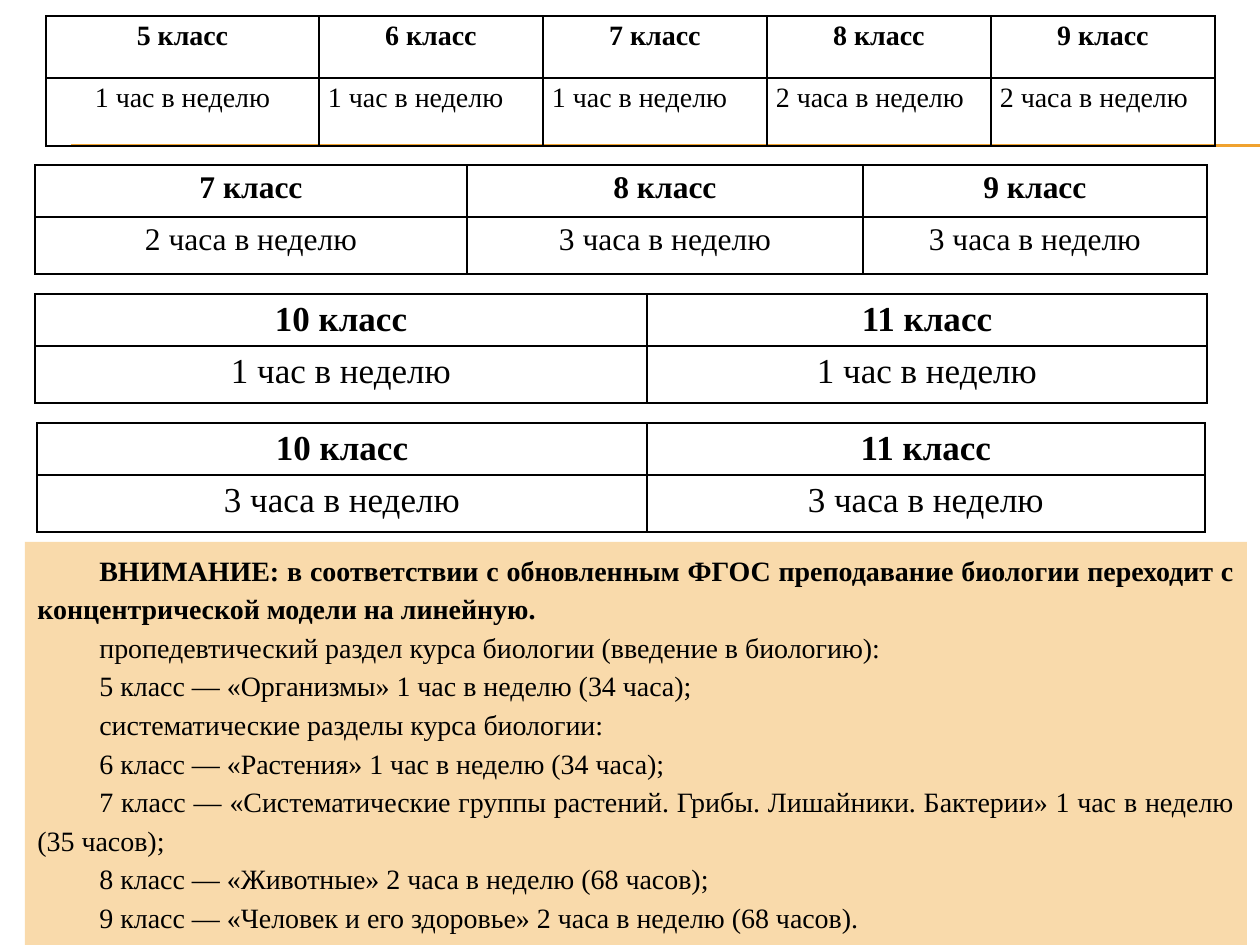
import pptx
import pptx.util
import pptx.dml.color
import pptx.enum.shapes
import pptx.enum.text
import pptx.oxml.ns
from lxml import etree

ALIGN = pptx.enum.text.PP_ALIGN
COLORS = {"text": "000000", "border": "000000", "rule": "F0A22E", "notice": "F9DAAB"}
FONT = "Times New Roman"
SCALE = 914400 / 126  # EMU in one px

TABLES = [
    {"at": (46, 16), "columns": [273, 224, 224, 224, 224], "rows": [62, 68], "size": 16,
     "justify_from": 1,
     "cells": [["5 класс", "6 класс", "7 класс", "8 класс", "9 класс"],
               ["1 час в неделю", "1 час в неделю", "1 час в неделю",
                "2 часа в неделю", "2 часа в неделю"]]},
    {"at": (35, 165), "columns": [432, 396, 344], "rows": [52, 57], "size": 18,
     "cells": [["7 класс", "8 класс", "9 класс"],
               ["2 часа в неделю", "3 часа в неделю", "3 часа в неделю"]]},
    {"at": (35, 294), "columns": [612, 560], "rows": [52, 57], "size": 20,
     "cells": [["10 класс", "11 класс"], ["1 час в неделю", "1 час в неделю"]]},
    {"at": (37, 423), "columns": [610, 558], "rows": [52, 57], "size": 20,
     "cells": [["10 класс", "11 класс"], ["3 часа в неделю", "3 часа в неделю"]]},
]

NOTICE = [
    "ВНИМАНИЕ: в соответствии с обновленным ФГОС преподавание биологии переходит "
    "с концентрической модели на линейную.",
    "пропедевтический раздел курса биологии (введение в биологию):",
    "5 класс — «Организмы» 1 час в неделю (34 часа);",
    "систематические разделы курса биологии:",
    "6 класс — «Растения» 1 час в неделю (34 часа);",
    "7 класс — «Систематические группы растений. Грибы. Лишайники. Бактерии» "
    "1 час в неделю (35 часов);",
    "8 класс — «Животные» 2 часа в неделю (68 часов);",
    "9 класс — «Человек и его здоровье» 2 часа в неделю (68 часов).",
]


def px(length):
    return pptx.util.Emu(round(length * SCALE))


def rgb(name):
    return pptx.dml.color.RGBColor.from_string(COLORS[name])


def format_paragraph(para, size, bold, align):
    para.alignment = align
    para.line_spacing = 1.15
    for span in para.runs:
        span.font.name = FONT
        span.font.size = pptx.util.Pt(size)
        span.font.bold = bold
        span.font.color.rgb = rgb("text")


def add_borders(cell):
    properties = cell._tc.get_or_add_tcPr()
    qn = pptx.oxml.ns.qn
    for side in ("lnL", "lnR", "lnT", "lnB"):
        line = etree.SubElement(properties, qn(f"a:{side}"), w="12700")
        fill = etree.SubElement(line, qn("a:solidFill"))
        etree.SubElement(fill, qn("a:srgbClr"), val=COLORS["border"])


def add_rule(page, top):
    rule = page.shapes.add_connector(
        pptx.enum.shapes.MSO_CONNECTOR.STRAIGHT, px(71), px(top), px(1260), px(top))
    rule.line.color.rgb = rgb("rule")
    rule.line.width = pptx.util.Pt(0.75)
    etree.SubElement(rule._element.spPr, pptx.oxml.ns.qn("a:effectLst"))


def add_notice(page):
    box = page.shapes.add_shape(pptx.enum.shapes.MSO_SHAPE.RECTANGLE,
                                px(25), px(542), px(1222), px(403))
    box.shadow.inherit = False
    box.fill.solid()
    box.fill.fore_color.rgb = rgb("notice")
    box.line.fill.background()
    frame = box.text_frame
    frame.word_wrap = True
    frame.auto_size = pptx.enum.text.MSO_AUTO_SIZE.SHAPE_TO_FIT_TEXT
    frame.vertical_anchor = pptx.enum.text.MSO_ANCHOR.TOP
    frame.text = "\n".join(NOTICE)
    for index, para in enumerate(frame.paragraphs):
        para._p.get_or_add_pPr().set("indent", str(px(62)))
        format_paragraph(para, 16, index == 0, ALIGN.JUSTIFY)


def add_hours_table(page, data):
    left, top = data["at"]
    columns, rows = data["columns"], data["rows"]
    table = page.shapes.add_table(len(rows), len(columns), px(left), px(top),
                                  px(sum(columns)), px(sum(rows))).table
    for column, width in zip(table.columns, columns):
        column.width = px(width)
    justify_from = data.get("justify_from", len(columns))
    for r, (height, texts) in enumerate(zip(rows, data["cells"])):
        table.rows[r].height = px(height)
        for c, text in enumerate(texts):
            cell = table.cell(r, c)
            cell.text = text
            cell.margin_left = cell.margin_right = px(9)
            cell.margin_top = cell.margin_bottom = 0
            add_borders(cell)
            cell.fill.background()
            justified = r > 0 and c >= justify_from
            format_paragraph(cell.text_frame.paragraphs[0], data["size"], r == 0,
                             ALIGN.JUSTIFY if justified else ALIGN.CENTER)


def main():
    deck = pptx.Presentation()
    deck.slide_width, deck.slide_height = px(1260), px(945)
    page = deck.slides.add_slide(deck.slide_layouts[6])
    for top in (145, 146):
        add_rule(page, top)
    add_notice(page)
    for data in TABLES:
        add_hours_table(page, data)
    deck.save("out.pptx")


if __name__ == "__main__":
    main()
